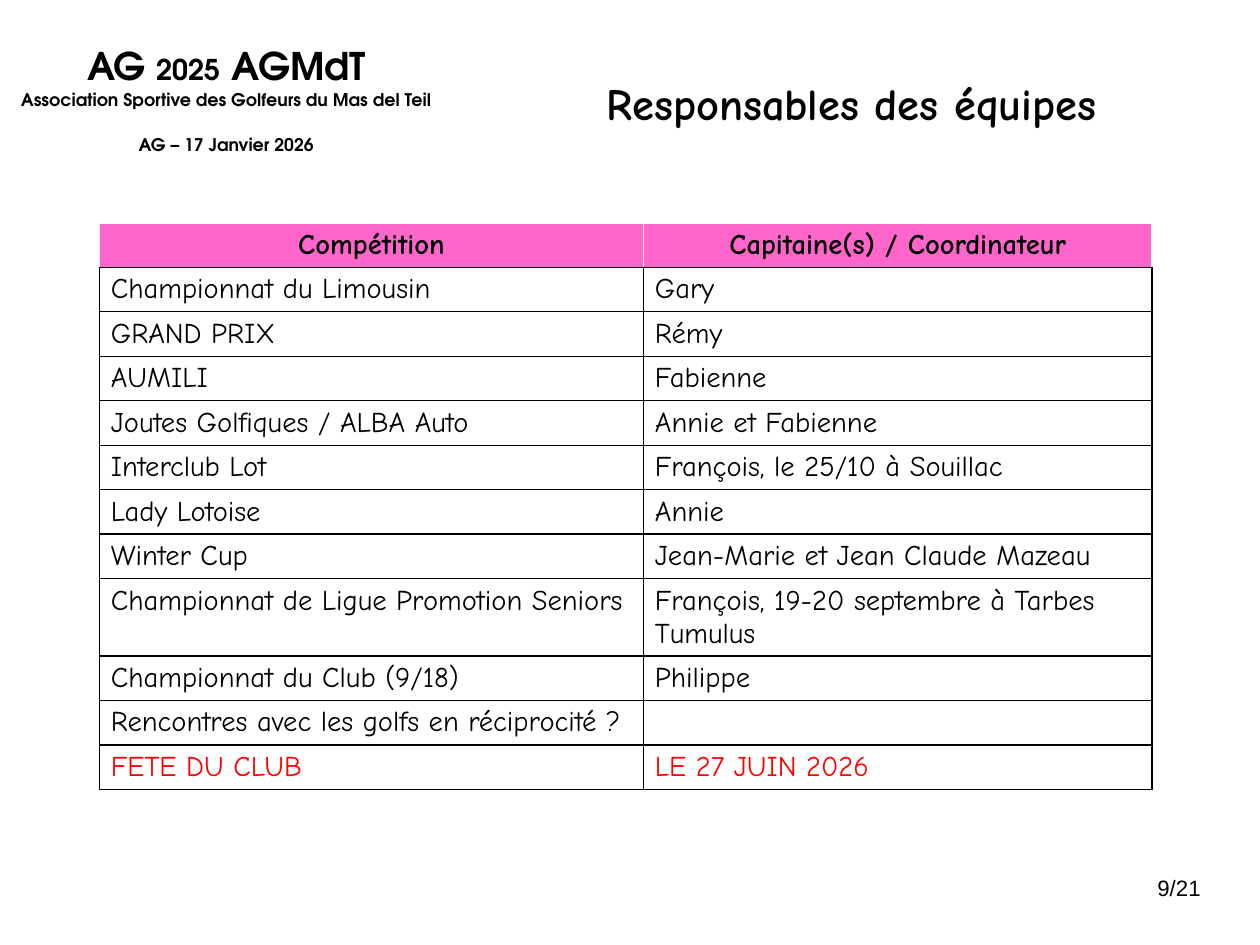
from lxml.etree import SubElement
from pptx import Presentation
from pptx.dml.color import RGBColor
from pptx.enum.text import MSO_AUTO_SIZE, PP_ALIGN
from pptx.oxml.ns import qn
from pptx.util import Inches, Pt

BLACK, WHITE, RED, PINK = "000000", "FFFFFF", "FF0000", "FF66CC"
TABLE_FONT = "Comic Neue"
HEADER_FONT = "TeX Gyre Adventor"
CM_PER_INCH = 2.54
COLUMN_WIDTHS = (4.76, 4.45)
# Minimum heights: the rows grow to fit their text
ROW_HEIGHTS = [0.3] * 7 + [0.26] + [0.22] * 3 + [0.28]
TABLE_HEIGHT = 5.4

TEAMS = [
    ("Compétition", "Capitaine(s) / Coordinateur"),
    ("Championnat du Limousin", "Gary"),
    ("GRAND PRIX", "Rémy"),
    ("AUMILI", "Fabienne"),
    ("Joutes Golfiques / ALBA Auto", "Annie et Fabienne"),
    ("Interclub Lot", "François, le 25/10 à Souillac"),
    ("Lady Lotoise", "Annie"),
    ("Winter Cup", "Jean-Marie et Jean Claude Mazeau"),
    ("Championnat de Ligue Promotion Seniors",
     "François, 19-20 septembre à Tarbes Tumulus"),
    ("Championnat du Club (9/18)", "Philippe"),
    ("Rencontres avec les golfs en réciprocité ?", ""),
    ("FETE DU CLUB", "LE 27 JUIN 2026"),
]


def color(value):
    return RGBColor.from_string(value)


def style(font, name, size, tint=BLACK, bold=False):
    font.name = name
    font.size = Pt(size)
    font.bold = bold
    font.color.rgb = color(tint)


def add_text(page, left, top, width, height, lines, font, bold=True,
             line_spacing=1.0):
    """Each line is a list of (text, size) spans."""
    box = page.shapes.add_textbox(
        Inches(left), Inches(top), Inches(width), Inches(height))
    frame = box.text_frame
    frame.word_wrap = True
    for index, spans in enumerate(lines):
        para = frame.paragraphs[0] if index == 0 else frame.add_paragraph()
        para.alignment = PP_ALIGN.CENTER
        para.line_spacing = line_spacing
        for text, size in spans:
            span = para.add_run()
            span.text = text
            style(span.font, font, size, bold=bold)
    return frame


def set_borders(cell, sides):
    properties = cell._tc.get_or_add_tcPr()
    for side, tint in zip("LRTB", sides):
        line = SubElement(properties, qn(f"a:ln{side}"), w=str(Pt(1)))
        fill = SubElement(line, qn("a:solidFill"))
        SubElement(fill, qn("a:srgbClr"), val=tint)


def fill_cell(cell, text, is_header, tint):
    set_borders(cell, (WHITE, WHITE, WHITE, BLACK) if is_header
                else (BLACK,) * 4)
    if is_header:
        cell.fill.solid()
        cell.fill.fore_color.rgb = color(PINK)
    else:
        cell.fill.background()
    cell.text_frame.text = text
    para = cell.text_frame.paragraphs[0]
    para.alignment = PP_ALIGN.CENTER if is_header else PP_ALIGN.LEFT
    style(para.font, TABLE_FONT, 18, tint, is_header)
    for span in para.runs:
        style(span.font, TABLE_FONT, 18, tint, is_header)


def add_team_table(page, left, top):
    holder = page.shapes.add_table(
        len(TEAMS), len(COLUMN_WIDTHS), Inches(left), Inches(top),
        Inches(sum(COLUMN_WIDTHS)), Inches(TABLE_HEIGHT))
    table = holder.table
    table.horz_banding = False
    for column, width in zip(table.columns, COLUMN_WIDTHS):
        column.width = Inches(width)
    for row, height in zip(table.rows, ROW_HEIGHTS):
        row.height = Inches(height)
    holder.height = Inches(TABLE_HEIGHT)
    for row, texts in enumerate(TEAMS):
        tint = RED if row == len(TEAMS) - 1 else BLACK
        for column, text in enumerate(texts):
            fill_cell(table.cell(row, column), text, row == 0, tint)


def main():
    deck = Presentation()
    # 28 by 21 centimetres
    deck.slide_width = Inches(28 / CM_PER_INCH)
    deck.slide_height = Inches(21 / CM_PER_INCH)
    page = deck.slides.add_slide(deck.slide_layouts[6])

    # Table of team captains
    add_team_table(page, 0.87, 1.95)

    # Title and page number
    add_text(page, 4.18, 0.65, 6.54, 0.77,
             [[("Responsables des équipes", 28)]], TABLE_FONT,
             line_spacing=0.94)
    number = add_text(page, 9.92, 7.6, 0.79, 0.34, [[("9/21", 14)]],
                      "Arial", bold=False)
    number.auto_size = MSO_AUTO_SIZE.SHAPE_TO_FIT_TEXT

    # Association header
    header = add_text(page, 0, 0.29, 3.96, 1.1, [
        [("AG ", 24), ("2025", 18), (" AGMdT", 24)],
        [("Association Sportive des Golfeurs du Mas del Teil", 11)],
        [("AG – 17 Janvier 2026", 11)],
    ], HEADER_FONT, line_spacing=1.07)
    header.paragraphs[-1].space_before = Pt(14)

    deck.save("out.pptx")


if __name__ == "__main__":
    main()
